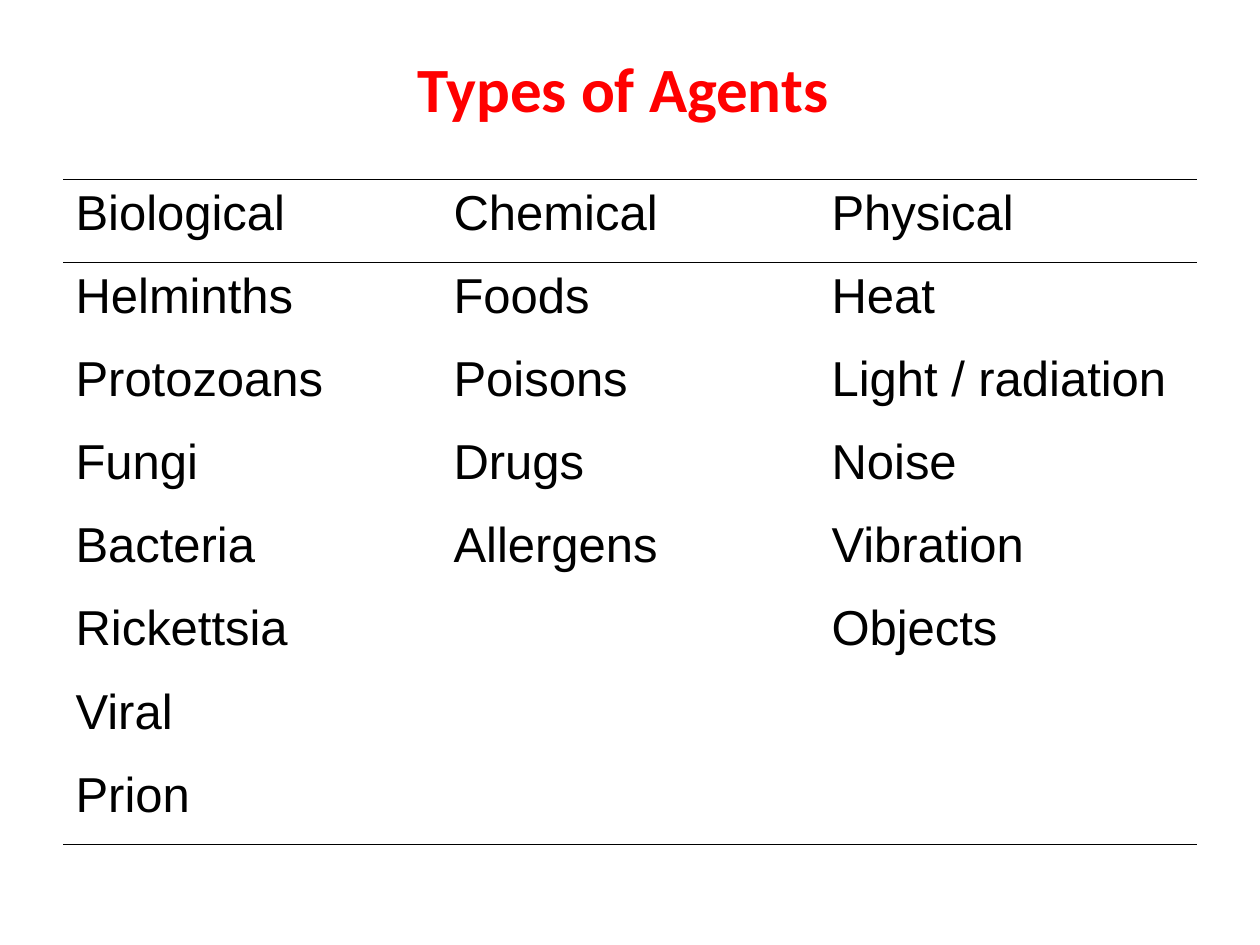
from itertools import zip_longest

from lxml.etree import SubElement
from pptx import Presentation
from pptx.dml.color import RGBColor
from pptx.enum.text import MSO_ANCHOR, PP_ALIGN
from pptx.oxml import parse_xml
from pptx.oxml.ns import nsdecls, qn
from pptx.util import Inches, Pt

RED = RGBColor(0xFF, 0x00, 0x00)
BLACK = RGBColor(0x00, 0x00, 0x00)
SIDE_MARGIN = 0.05

AGENTS = {
    "Biological": ["Helminths", "Protozoans", "Fungi", "Bacteria", "Rickettsia", "Viral", "Prion"],
    "Chemical": ["Foods", "Poisons", "Drugs", "Allergens"],
    "Physical": ["Heat", "Light / radiation", "Noise", "Vibration", "Objects"],
}


class AgentSlide:
    title_font, body_font = "Calibri", "Arial"
    title_size, body_size = Pt(36), Pt(28)
    rule_width = Pt(1)

    def __init__(self, deck):
        self.width, self.height = deck.slide_width, deck.slide_height
        self.slide = deck.slides.add_slide(deck.slide_layouts[5])

    def box(self, top, height):
        return (int(SIDE_MARGIN * self.width), int(top * self.height),
                int((1 - 2 * SIDE_MARGIN) * self.width), int(height * self.height))

    def style(self, paragraph, font, size, color, bold=False):
        paragraph.font.name, paragraph.font.size = font, size
        paragraph.font.color.rgb, paragraph.font.bold = color, bold

    def title(self, text, top, height):
        heading = self.slide.shapes.title
        heading.left, heading.top, heading.width, heading.height = self.box(top, height)
        heading.text_frame.text = text
        heading.text_frame.vertical_anchor = MSO_ANCHOR.MIDDLE
        line = heading.text_frame.paragraphs[0]
        line.alignment = PP_ALIGN.CENTER
        self.style(line, self.title_font, self.title_size, RED, True)

    def rules(self, cell, ruled):
        for position, side in enumerate("LRTB"):
            paint = (f'<a:solidFill><a:srgbClr val="{BLACK}"/></a:solidFill>'
                     if side in ruled else "<a:noFill/>")
            border = parse_xml(f'<a:ln{side} {nsdecls("a")} w="{self.rule_width}">{paint}</a:ln{side}>')
            cell._tc.get_or_add_tcPr().insert(position, border)

    def cell(self, cell, text, ruled):
        cell.fill.background()
        self.rules(cell, ruled)
        if text:
            cell.text = text
            entry = cell.text_frame.paragraphs[0]
            self.style(entry, self.body_font, self.body_size, BLACK)
            spacing = SubElement(entry._p.get_or_add_pPr(), qn("a:spcBef"))
            SubElement(spacing, qn("a:spcPct"), val="20000")
            entry._p.pPr.insert(0, spacing)

    def table(self, columns, top, height):
        rows = [tuple(columns), *zip_longest(*columns.values(), fillvalue="")]
        table = self.slide.shapes.add_table(len(rows), len(columns), *self.box(top, height)).table
        table.first_row = table.horz_banding = False
        ruled = {0: "TB", 1: "T", len(rows) - 1: "B"}
        for r, row in enumerate(rows):
            for c, text in enumerate(row):
                self.cell(table.cell(r, c), text, ruled.get(r, ""))


def main():
    deck = Presentation()
    deck.slide_width, deck.slide_height = Inches(10), Inches(7.5)
    agents = AgentSlide(deck)
    agents.title("Types of Agents ", top=0.04, height=0.104)
    agents.table(AGENTS, top=0.19, height=0.704)
    deck.save("out.pptx")


if __name__ == "__main__":
    main()
